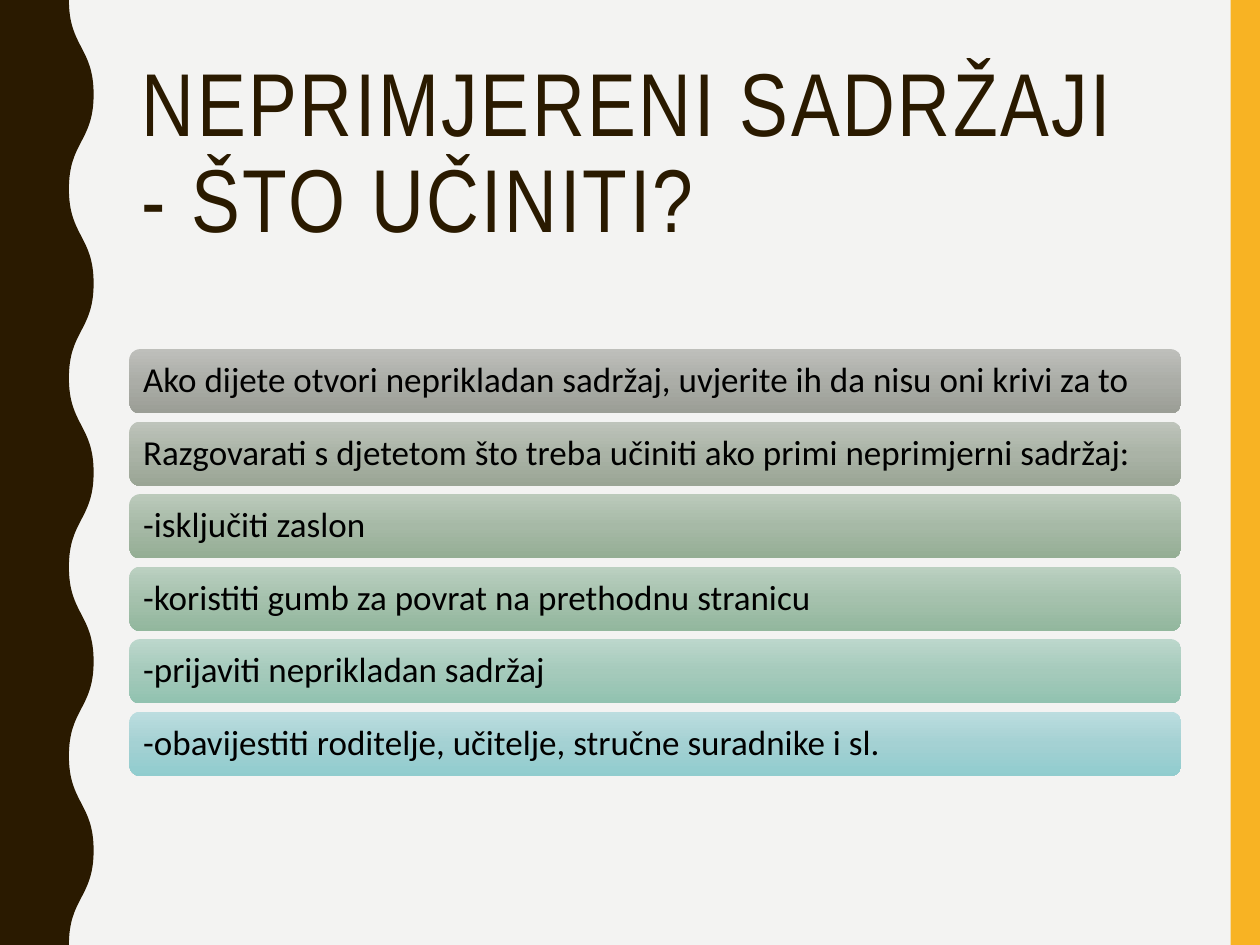
from copy import deepcopy
from dataclasses import dataclass

from lxml.etree import SubElement
from pptx import Presentation
from pptx.dml.color import RGBColor
from pptx.enum.shapes import MSO_SHAPE
from pptx.enum.text import MSO_ANCHOR, PP_ALIGN
from pptx.oxml.ns import qn
from pptx.util import Pt

W, H = 720, 540
DARK = "2A1A00"
LEFT, CONTENT_W = 74, 601
BAR_TOP, BAR_H, BAR_STEP = 199.5, 36.8, 41.43
CORNER_INSET = 1.8
WAVE_IN, WAVE_OUT, WAVE_STEP = 39.4, 53.5, 54


@dataclass
class Bar:
    text: str
    colors: tuple[str, str, str]  # top, middle, bottom


BARS = [
    Bar("Ako dijete otvori neprikladan sadržaj, uvjerite ih da nisu oni krivi za to",
        ("BEBFBB", "ABADA7", "9B9E96")),
    Bar("Razgovarati s djetetom što treba učiniti ako primi neprimjerni sadržaj:",
        ("BEC4BB", "AAB3A6", "9AA595")),
    Bar("-isključiti zaslon", ("BBCABB", "A6B9A6", "94AE94")),
    Bar("-koristiti gumb za povrat na prethodnu stranicu", ("BBD0C1", "A5C1AD", "92B79D")),
    Bar("-prijaviti neprikladan sadržaj", ("BCD7CC", "A5CABB", "91C2B0")),
    Bar("-obavijestiti roditelje, učitelje, stručne suradnike i sl.",
        ("BCDDDF", "A4D1D3", "90CCCE")),
]


def rgb(value: str) -> RGBColor:
    return RGBColor.from_string(value)


def fill_solid(sp, color: str) -> None:
    sp.shadow.inherit = False
    sp.fill.solid()
    sp.fill.fore_color.rgb = rgb(color)
    sp.line.fill.background()


def fill_gradient(sp, colors: tuple[str, str, str]) -> None:
    sp.shadow.inherit = False
    sp.line.fill.background()
    sp.fill.gradient()
    sp.fill.gradient_angle = 270
    first = sp._element.spPr.xpath("./a:gradFill/a:gsLst/a:gs")[0]
    first.addnext(deepcopy(first))
    for stop, color, position in zip(sp.fill.gradient_stops, colors, (0, 0.5, 1)):
        stop.color.rgb = rgb(color)
        stop.position = position


def add_text(shapes, left: float, top: float, width: float, height: float):
    """Add a wrapped, vertically centred text box; return its frame and paragraph."""
    tf = shapes.add_textbox(Pt(left), Pt(top), Pt(width), Pt(height)).text_frame
    tf.word_wrap = True
    tf.vertical_anchor = MSO_ANCHOR.MIDDLE
    p = tf.paragraphs[0]
    p.alignment = PP_ALIGN.LEFT
    p.line_spacing = 0.9
    return tf, p


def add_run(p, text: str, font: str, size: float, color: str):
    r = p.add_run()
    r.text = text
    r.font.name = font
    r.font.size = Pt(size)
    r.font.color.rgb = rgb(color)
    return r


def add_wave(s) -> None:
    # Two control points and an end point for each half wave
    points = []
    for i in range(H // WAVE_STEP):
        x0, x1 = (WAVE_IN, WAVE_OUT) if i % 2 == 0 else (WAVE_OUT, WAVE_IN)
        y, mid = i * WAVE_STEP, (i + 0.5) * WAVE_STEP
        points += [(x0, mid), (x1, mid), (x1, y + WAVE_STEP)]
    outline = [(x * 10, y * 10) for x, y in points + [(0, H), (0, 0)]]
    builder = s.shapes.build_freeform(WAVE_IN * 10, 0, scale=Pt(1) / 10)
    builder.add_line_segments(outline, close=True)
    sp = builder.convert_to_shape()
    fill_solid(sp, DARK)

    # Join each three line segments into one Bézier curve
    lines = sp._element.spPr.xpath(".//a:lnTo")[:len(points)]
    for i in range(0, len(lines), 3):
        curve = SubElement(lines[i].getparent(), qn("a:cubicBezTo"))
        lines[i].addprevious(curve)
        for line in lines[i:i + 3]:
            curve.append(line[0])
            line.getparent().remove(line)


def add_title(s, lines: list[str]) -> None:
    _, p = add_text(s.shapes, LEFT, 30, CONTENT_W, 117.5)
    for i, line in enumerate(lines):
        if i:
            p.add_line_break()
        r = add_run(p, line, "Arial Narrow", 51, DARK)
        r.font._element.set("spc", "150")


def add_bar(shapes, bar: Bar, top: float) -> None:
    sp = shapes.add_shape(MSO_SHAPE.ROUNDED_RECTANGLE,
                          Pt(LEFT), Pt(top), Pt(CONTENT_W), Pt(BAR_H))
    fill_gradient(sp, bar.colors)
    tf, p = add_text(shapes, LEFT + CORNER_INSET, top + CORNER_INSET,
                     CONTENT_W - 2 * CORNER_INSET, BAR_H - 2 * CORNER_INSET)
    tf.margin_left = tf.margin_right = tf.margin_top = tf.margin_bottom = Pt(6)
    add_run(p, bar.text, "Calibri", 20, "000000")


def main() -> None:
    prs = Presentation()
    prs.slide_width, prs.slide_height = Pt(W), Pt(H)
    s = prs.slides.add_slide(prs.slide_layouts[6])

    # Background and side decoration
    s.background.fill.solid()
    s.background.fill.fore_color.rgb = rgb("F3F3F2")
    stripe = s.shapes.add_shape(MSO_SHAPE.RECTANGLE, Pt(703.2), Pt(0), Pt(16.8), Pt(H))
    fill_solid(stripe, "F8B323")
    add_wave(s)

    # Title and grouped list of bars
    add_title(s, ["NEPRIMJERENI SADRŽAJI", "- ŠTO UČINITI?"])
    group = s.shapes.add_group_shape()
    for i, bar in enumerate(BARS):
        add_bar(group.shapes, bar, BAR_TOP + i * BAR_STEP)

    prs.save("out.pptx")


if __name__ == "__main__":
    main()
